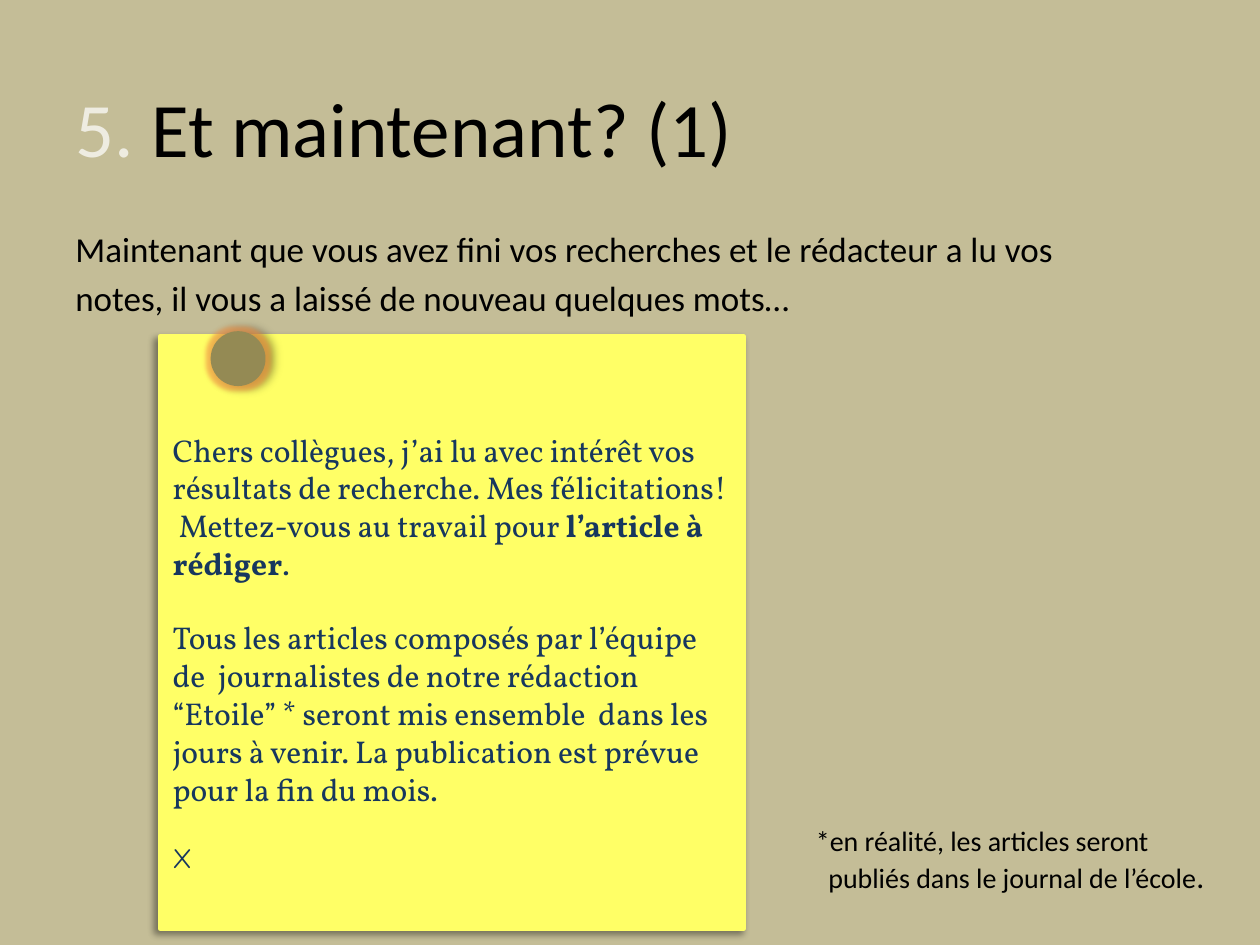
from lxml import etree
from pptx import Presentation, util as u
from pptx.dml.color import RGBColor
from pptx.enum import shapes, text
from pptx.oxml.ns import qn

HEX = {"sand": "C4BD97", "cream": "EEECE1", "ink": "000000", "note": "FFFF66",
       "navy": "17375E", "pin": "948A54", "glow": "F79646"}
SANS, SERIF, COMIC = "Calibri", "Vollkorn", "Comic Neue"


def tint(name):
    return RGBColor.from_string(HEX[name])


class Deck:
    """Holds the style and the current slide."""

    def __init__(self, wide, high):
        self.prs = Presentation()
        self.prs.slide_width, self.prs.slide_height = u.Cm(wide), u.Cm(high)
        self.base = {"name": SANS, "size": 16, "bold": False, "color": "ink"}

    def page(self, back):
        self.slide = self.prs.slides.add_slide(self.prs.slide_layouts[6])
        fill = self.slide.background.fill
        fill.solid()
        fill.fore_color.rgb = tint(back)

    def words(self, shape, paras, top=0.13, anchor="TOP", **style):
        """Each paragraph is (format dict, [(words, font dict), ...])."""
        frame = shape.text_frame
        form = {"word_wrap": True, "margin_top": u.Cm(top),
                "vertical_anchor": getattr(text.MSO_ANCHOR, anchor)}
        for key, val in form.items():
            setattr(frame, key, val)
        for i, (form, runs) in enumerate(paras):
            para = frame.add_paragraph() if i else frame.paragraphs[0]
            para.alignment = text.PP_ALIGN.LEFT
            for key, val in form.items():
                if key == "indent":
                    para._p.get_or_add_pPr().set("marL", str(u.Cm(val)))
                else:
                    setattr(para, key, u.Pt(val))
            for part, own in runs:
                run = para.add_run()
                run.text = part
                look = {**self.base, **style, **own}
                run.font.color.rgb = tint(look.pop("color"))
                look["size"] = u.Pt(look["size"])
                for key, val in look.items():
                    setattr(run.font, key, val)

    def label(self, box, paras, **style):
        shape = self.slide.shapes.add_textbox(*map(u.Cm, box))
        self.words(shape, paras, **style)

    def form(self, kind, box, color, angle, glow=None):
        shape = self.slide.shapes.add_shape(kind, *map(u.Cm, box))
        shape.shadow.inherit = False
        shape.fill.solid()
        shape.fill.fore_color.rgb = shape.line.color.rgb = tint(color)
        shape.line.width = u.Pt(3)
        if glow:
            self.effect(shape, "glow", glow, 60, rad=u.Pt(5))
        self.effect(shape, "outerShdw", "ink", 40, blurRad=u.Pt(4),
                    dist=u.Pt(3), dir=angle * 60000, rotWithShape=0)
        return shape

    def effect(self, shape, kind, color, alpha, **attrs):
        effects = shape._element.spPr.find(qn("a:effectLst"))
        item = etree.SubElement(effects, qn("a:" + kind))
        for key, val in attrs.items():
            item.set(key, str(val))
        rgb = etree.SubElement(item, qn("a:srgbClr"), val=HEX[color])
        etree.SubElement(rgb, qn("a:alpha"), val=str(alpha * 1000))


def main():
    deck = Deck(25.4, 19.05)
    deck.page("sand")

    # Title
    deck.label((1.27, 0.96, 22.86, 3.18),
               [({}, [("5. ", {"color": "cream"}), ("Et maintenant? (1)", {})])],
               anchor="MIDDLE", size=44)

    # Introduction
    intro = ["Maintenant que vous avez fini vos recherches et le rédacteur a lu vos",
             "notes, il vous a laissé de nouveau quelques mots…"]
    deck.label((1.27, 4.45, 22.86, 2.7),
               [({"space_before": 4}, [(line, {})]) for line in intro], size=20)

    # Pinned note
    note = deck.form(shapes.MSO_SHAPE.RECTANGLE, (3.23, 6.78, 11.76, 11.94),
                     "note", 135)
    deck.words(note, [
        ({}, [("Chers collègues, j’ai lu avec intérêt vos résultats de recherche. "
               "Mes félicitations!  Mettez-vous au travail pour ", {}),
              ("l’article à rédiger", {"bold": True}), (".", {})]),
        ({"space_before": 21},
         [("Tous les articles composés par l’équipe de  journalistes de notre "
           "rédaction “Etoile” * seront mis ensemble  dans les jours à venir. "
           "La publication est prévue pour la fin du mois.", {})]),
        ({"space_before": 19}, [("X", {"name": COMIC, "size": 16})]),
    ], top=1.9, name=SERIF, size=18, color="navy")

    # Pin
    deck.form(shapes.MSO_SHAPE.FLOWCHART_CONNECTOR, (4.3, 6.73, 1, 1),
              "pin", 0, glow="glow")

    # Footnote
    deck.label((16.2, 16.48, 9.2, 1.7), [
        ({}, [("*en réalité, les articles seront", {})]),
        ({"indent": 0.25}, [("publiés dans le journal de l’école", {}),
                            (".", {"size": 18})]),
    ])

    deck.prs.save("out.pptx")


if __name__ == "__main__":
    main()
